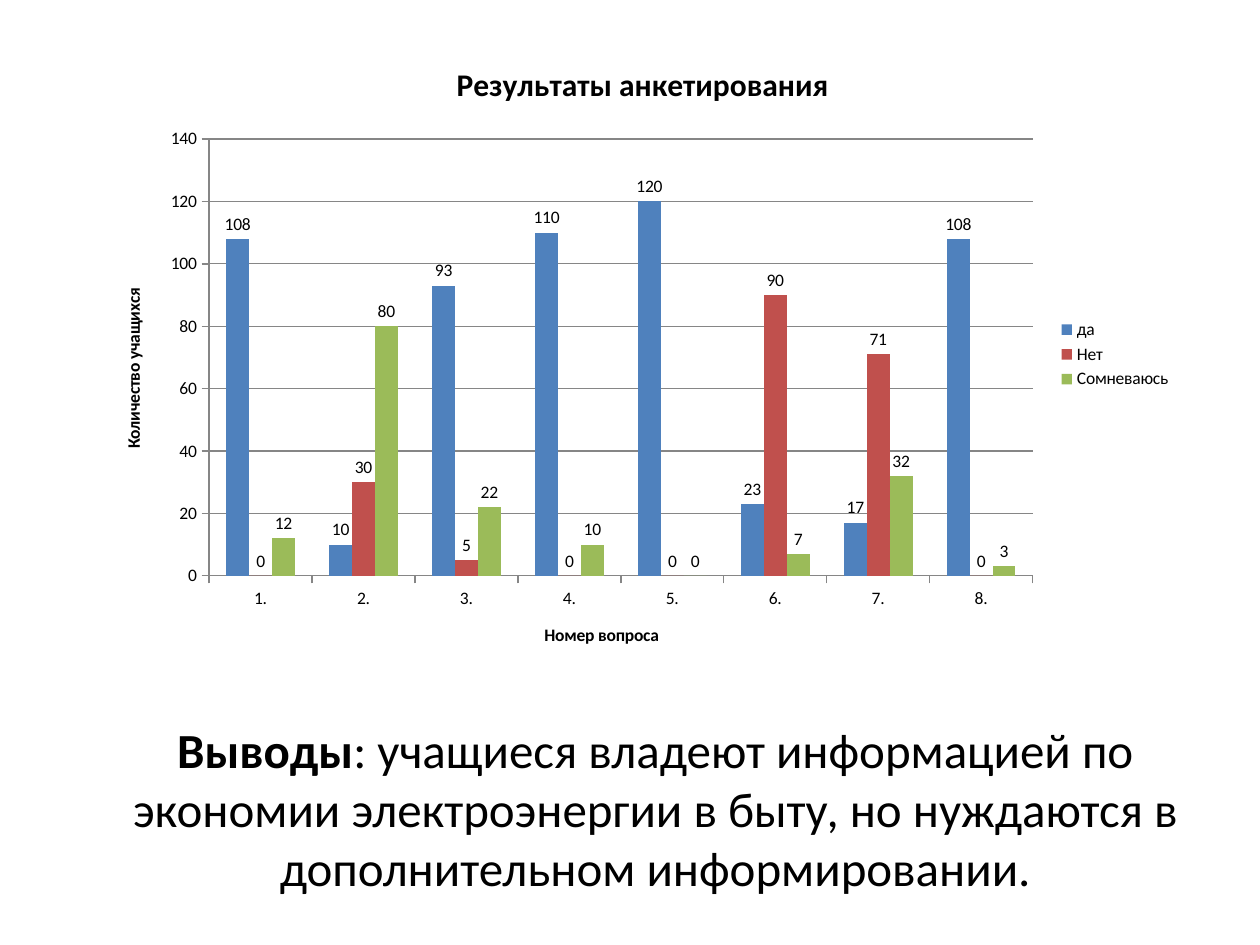
from lxml import etree
from pptx import Presentation
from pptx.chart.data import CategoryChartData
from pptx.dml.color import RGBColor
from pptx.enum.chart import XL_CHART_TYPE, XL_LABEL_POSITION, XL_LEGEND_POSITION, XL_TICK_MARK
from pptx.enum.text import MSO_ANCHOR, MSO_AUTO_SIZE, PP_ALIGN
from pptx.oxml import parse_xml
from pptx.oxml.ns import nsdecls, qn
from pptx.util import Inches, Pt

CLUSTERED = XL_CHART_TYPE.COLUMN_CLUSTERED
OUTSIDE_END = XL_LABEL_POSITION.OUTSIDE_END
LEGEND_RIGHT = XL_LEGEND_POSITION.RIGHT
TICK_OUT, TICK_NONE = XL_TICK_MARK.OUTSIDE, XL_TICK_MARK.NONE

WIDTH, HEIGHT = Inches(10), Inches(7.5)
FONT = "Calibri"
COLORS = {
    "text": "000000",
    "grid": "868686",
    "да": "4F81BD",
    "Нет": "C0504D",
    "Сомневаюсь": "9BBB59",
}
ANSWERS = {
    "да": (108, 10, 93, 110, 120, 23, 17, 108),
    "Нет": (0, 30, 5, 0, 0, 90, 71, 0),
    "Сомневаюсь": (12, 80, 22, 10, 0, 7, 32, 3),
}
CONCLUSION = (
    ("Выводы", True),
    (": учащиеся владеют информацией по экономии электроэнергии в быту, "
     "но нуждаются в дополнительном информировании.", False),
)
PLOT_SHARES = {"x": 0.1, "y": 0.16, "w": 0.76, "h": 0.69}


def color(name):
    return RGBColor.from_string(COLORS[name])


def set_values(target, values):
    for name, value in values.items():
        setattr(target, name, value)


def format_font(font, size, bold=False):
    set_values(font, {"name": FONT, "size": Pt(size), "bold": bold})
    font.color.rgb = color("text")


def share_box(left, top, width, height):
    return (round(left * WIDTH), round(top * HEIGHT),
            round(width * WIDTH), round(height * HEIGHT))


def add_conclusion(slide):
    title = slide.shapes.title
    box = share_box(0.07, 0.77, 0.9, 0.17)
    set_values(title, dict(zip(("left", "top", "width", "height"), box)))
    frame = title.text_frame
    set_values(frame, {
        "word_wrap": True,
        "auto_size": MSO_AUTO_SIZE.NONE,
        "vertical_anchor": MSO_ANCHOR.MIDDLE,
    })
    paragraph = frame.paragraphs[0]
    paragraph.alignment = PP_ALIGN.CENTER
    for text, bold in CONCLUSION:
        run = paragraph.add_run()
        run.text = text
        format_font(run.font, 28, bold)


def set_heading(owner, title, text, size):
    title.text_frame.text = text
    format_font(title.text_frame.paragraphs[0].runs[0].font, size, True)
    owner.has_title = True


def format_axis(axis, heading):
    set_values(axis, {"major_tick_mark": TICK_OUT, "minor_tick_mark": TICK_NONE})
    axis.format.line.color.rgb = color("grid")
    format_font(axis.tick_labels.font, 10)
    set_heading(axis, axis.axis_title, heading, 10)


def format_series(series):
    series.format.fill.solid()
    series.format.fill.fore_color.rgb = color(series.name)
    series.invert_if_negative = False
    labels = series.data_labels
    set_values(labels, {"show_value": True, "position": OUTSIDE_END})
    format_font(labels.font, 10)


def place_plot(chart):
    plot_area = chart.plots[0]._element.getparent()
    for layout in plot_area.findall(qn("c:layout")):
        plot_area.remove(layout)
    layout = parse_xml(f"<c:layout {nsdecls('c')}><c:manualLayout/></c:layout>")
    manual = layout[0]
    settings = {"layoutTarget": "inner", "xMode": "edge", "yMode": "edge", **PLOT_SHARES}
    for name, value in settings.items():
        etree.SubElement(manual, qn(f"c:{name}")).set("val", str(value))
    plot_area.insert(0, layout)


def add_survey_chart(slide):
    data = CategoryChartData()
    data.categories = [f"{number}." for number in range(1, 9)]
    for name, values in ANSWERS.items():
        data.add_series(name, values)
    box = share_box(0.08, 0.04, 0.86, 0.67)
    chart = slide.shapes.add_chart(CLUSTERED, *box, data).chart
    format_font(chart.font, 10)
    set_heading(chart, chart.chart_title, "Результаты анкетирования", 18)
    format_axis(chart.category_axis, "Номер вопроса")
    value_axis = chart.value_axis
    format_axis(value_axis, "Количество учащихся")
    set_values(value_axis, {"minimum_scale": 0, "maximum_scale": 140, "major_unit": 20})
    value_axis.major_gridlines.format.line.color.rgb = color("grid")
    chart.has_legend = True
    set_values(chart.legend, {"position": LEGEND_RIGHT, "include_in_layout": False})
    format_font(chart.legend.font, 10)
    set_values(chart.plots[0], {"gap_width": 150, "overlap": 0, "vary_by_categories": False})
    for series in chart.plots[0].series:
        format_series(series)
    place_plot(chart)


def main():
    presentation = Presentation()
    set_values(presentation, {"slide_width": WIDTH, "slide_height": HEIGHT})
    slide = presentation.slides.add_slide(presentation.slide_layouts[5])
    add_conclusion(slide)
    add_survey_chart(slide)
    presentation.save("out.pptx")


if __name__ == "__main__":
    main()
